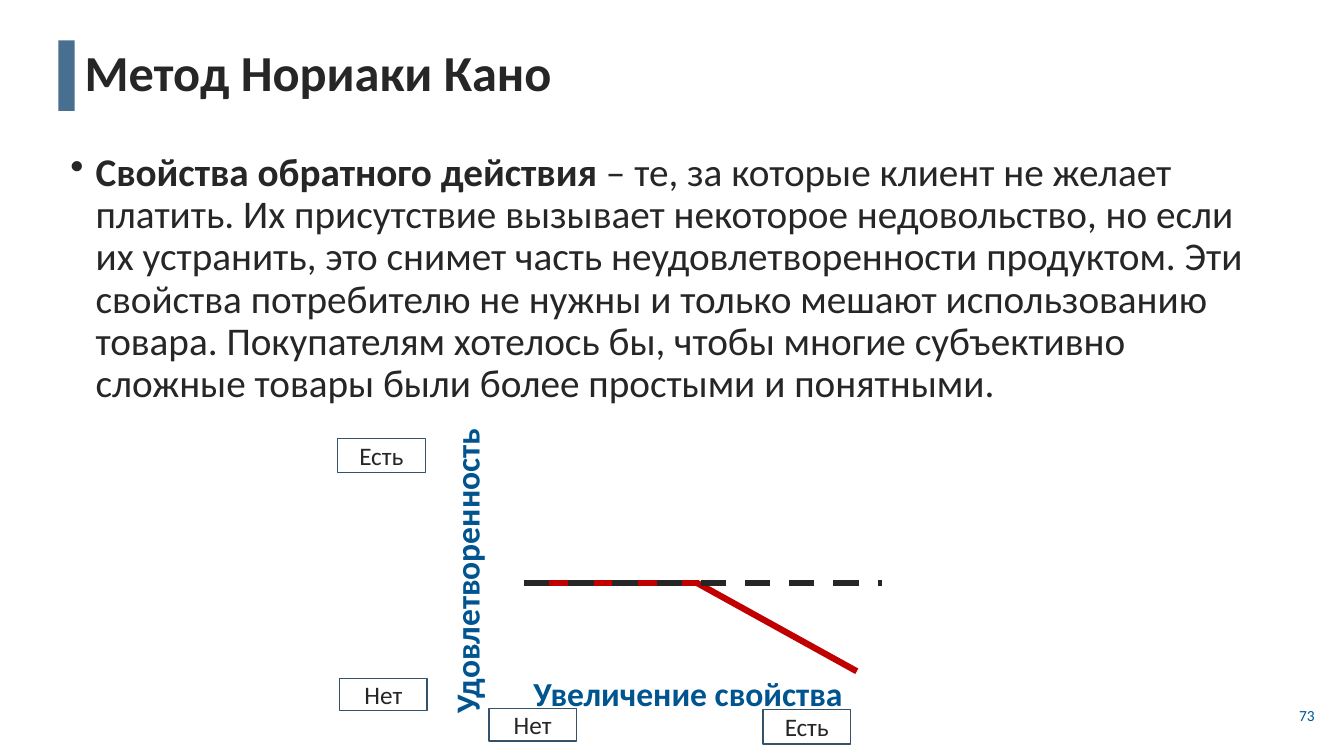
from dataclasses import dataclass

from lxml.etree import SubElement
from pptx import Presentation
from pptx.dml.color import RGBColor
from pptx.enum.dml import MSO_LINE
from pptx.enum.shapes import MSO_CONNECTOR, MSO_SHAPE
from pptx.enum.text import MSO_ANCHOR, PP_ALIGN
from pptx.oxml.ns import qn
from pptx.util import Pt


@dataclass(frozen=True)
class Theme:
    font: str = "Calibri"
    ink: str = "262626"
    blue: str = "005490"
    bar: str = "496F90"
    edge: str = "36526B"
    red: str = "C00000"
    title: float = 36
    body: float = 28
    axis: float = 24
    label: float = 18
    page: float = 11
    stroke: float = 4.5


class Canvas:
    def __init__(self, slide, theme):
        self.shapes = slide.shapes
        self.theme = theme

    def fill_text(self, frame, text, size, color, bold=False, align=PP_ALIGN.LEFT):
        frame.word_wrap = True
        frame.vertical_anchor = MSO_ANCHOR.MIDDLE
        para = frame.paragraphs[0]
        para.text = text
        para.alignment = align
        self.style(para.font, size, color, bold)
        return para

    def style(self, font, size, color, bold=None):
        font.name = self.theme.font
        font.size = Pt(size)
        font.color.rgb = RGBColor.from_string(color)
        font.bold = bold

    def text(self, area, *args, turn=0, **kwargs):
        box = self.shapes.add_textbox(*map(Pt, area))
        box.rotation = turn
        return self.fill_text(box.text_frame, *args, **kwargs)

    def bullet(self, area, lead, rest):
        box = self.shapes.add_textbox(*map(Pt, area))
        box.text_frame.word_wrap = True
        para = box.text_frame.paragraphs[0]
        para.line_spacing = 0.9
        para.space_before = Pt(10)
        self.style(para.font, self.theme.body, self.theme.ink)
        for words, bold in ((lead, True), (rest, False)):
            run = para.add_run()
            run.text = words
            run.font.bold = bold
        props = para._p.get_or_add_pPr()
        props.set("marL", str(Pt(18)))
        props.set("indent", str(Pt(-18)))
        mark = SubElement(props, qn("a:buChar"))
        mark.set("char", "•")
        props.insert_element_before(mark, "a:tabLst", "a:defRPr", "a:extLst")

    def rect(self, area, fill=None, edge=None):
        shape = self.shapes.add_shape(MSO_SHAPE.RECTANGLE, *map(Pt, area))
        shape.shadow.inherit = False
        if fill:
            shape.fill.solid()
            shape.fill.fore_color.rgb = RGBColor.from_string(fill)
        else:
            shape.fill.background()
        if edge:
            shape.line.color.rgb = RGBColor.from_string(edge)
            shape.line.width = Pt(1)
        else:
            shape.line.fill.background()
        return shape

    def label(self, area, text):
        frame = self.rect(area, edge=self.theme.edge).text_frame
        frame.margin_top = frame.margin_bottom = 0
        self.fill_text(frame, text, self.theme.label, self.theme.ink,
                       align=PP_ALIGN.CENTER)

    def line(self, start, end, color, dash=None):
        link = self.shapes.add_connector(MSO_CONNECTOR.STRAIGHT, *map(Pt, start + end))
        link.line.color.rgb = RGBColor.from_string(color)
        link.line.width = Pt(self.theme.stroke)
        link.line.dash_style = dash
        SubElement(link._element.spPr, qn("a:effectLst"))


def main():
    deck = Presentation()
    deck.slide_width, deck.slide_height = Pt(960), Pt(540)
    theme = Theme()
    page = Canvas(deck.slides.add_slide(deck.slide_layouts[6]), theme)

    page.rect((41.8, 28.8, 11.5, 50.4), fill=theme.bar)
    title = page.text((53.3, 28.8, 877.7, 50.4), "Метод Нориаки Кано",
                      theme.title, theme.ink, bold=True)
    title.line_spacing = 0.9
    page.bullet(
        (43.2, 105.1, 877.7, 392.4),
        "Свойства обратного действия",
        " – те, за которые клиент не желает платить. Их присутствие вызывает "
        "некоторое недовольство, но если их устранить, это снимет часть "
        "неудовлетворенности продуктом. Эти свойства потребителю не нужны и "
        "только мешают использованию товара. Покупателям хотелось бы, чтобы "
        "многие субъективно сложные товары были более простыми и понятными.",
    )
    page.text((920.9, 495.4, 31.7, 31.7), "73", theme.page, theme.blue)

    level = 416.2
    start = (374.4, level)
    page.line(start, (499, level), theme.red)
    page.line((497.5, level), (612, 479.5), theme.red)
    page.line(start, (630, level), theme.ink, MSO_LINE.DASH)

    for left, top, turn, name in (
        (354.2, 479.5, 0, "Увеличение свойства "),
        (193, 392.4, 270, "Удовлетворенность"),
    ):
        page.text((left, top, 280, 31), name, theme.axis, theme.blue,
                  bold=True, align=PP_ALIGN.CENTER, turn=turn)

    for left, top, high, name in (
        (545, 506.9, 24.5, "Есть"),
        (349.2, 506.2, 23, "Нет"),
        (241.2, 313.2, 24.5, "Есть"),
        (242.6, 484.6, 23, "Нет"),
    ):
        page.label((left, top, 62.6, high), name)

    deck.save("out.pptx")


if __name__ == "__main__":
    main()
